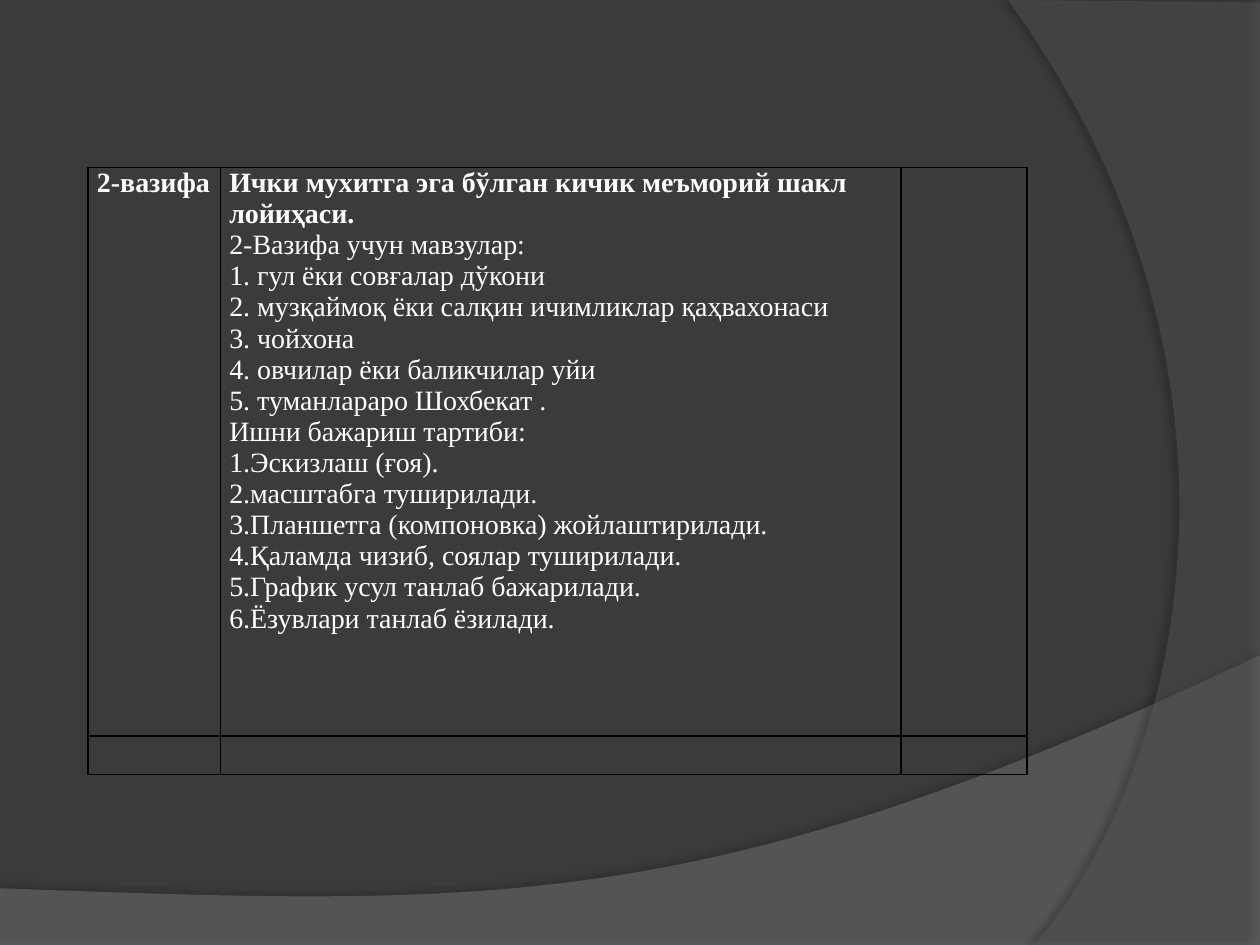
import pptx
import pptx.util
import pptx.dml.color
import pptx.oxml
from pptx.oxml.ns import qn, nsdecls
from pptx.util import Inches, Pt

HUES = {"back": "3B3B3B", "wave": "7F7F7F", "arc": "5E5E5E",
        "text": "FFFFFF", "line": "000000"}


def color(name):
    return pptx.dml.color.RGBColor.from_string(HUES[name])


def curve(a, b, c, d, steps=60):
    """Points along a cubic Bezier, after its start."""
    pts = []
    for i in range(1, steps + 1):
        t = i / steps
        u = 1 - t
        pts.append(tuple(u**3 * p + 3 * u * u * t * q + 3 * u * t * t * r + t**3 * s
                         for p, q, r, s in zip(a, b, c, d)))
    return pts


prs = pptx.Presentation()
prs.slide_width, prs.slide_height = Inches(10), Inches(7.5)
slide = prs.slides.add_slide(prs.slide_layouts[6])
slide.background.fill.solid()
slide.background.fill.fore_color.rgb = color("back")

# Translucent bands: hue, opacity, shadow opacity, distance, angle, outline
wave = [(0, 7.05), (0, 7.51), (10, 7.51), (10, 5.2)]
wave += curve((10, 5.2), (5.59, 7.29), (3.91, 7.19), (0, 7.05))
arc = [(10, 0.02), (10, 7.5), (8.21, 7.5)]
arc += curve((8.21, 7.5), (9.35, 6.19), (10.18, 3), (8, 0))
bands = [("wave", 45, 35, 3.5, 270, wave), ("arc", 40, 45, 4, 180, arc)]

for hue, alpha, dark, dist, angle, pts in bands:
    spots = [(Inches(x), Inches(y)) for x, y in pts]
    pen = slide.shapes.build_freeform(*spots[0])
    pen.add_line_segments(spots[1:], close=True)
    band = pen.convert_to_shape()
    band.fill.solid()
    band.fill.fore_color.rgb = color(hue)
    band.line.fill.background()
    band.shadow.inherit = False
    props = band.element.spPr
    tint = props.find(qn("a:solidFill"))[0]
    tint.append(pptx.oxml.parse_xml(f'<a:alpha {nsdecls("a")} val="{alpha * 1000}"/>'))
    props.find(qn("a:effectLst")).append(pptx.oxml.parse_xml(
        f'<a:outerShdw {nsdecls("a")} blurRad="{Pt(4)}" dist="{Pt(dist)}" '
        f'dir="{angle * 60000}" algn="ctr" rotWithShape="0">'
        f'<a:srgbClr val="{HUES["line"]}"><a:alpha val="{dark * 1000}"/></a:srgbClr>'
        '</a:outerShdw>'))

# Task table
task = ["2-вазифа"]
topics = [
    "Ички мухитга эга бўлган кичик меъморий шакл лойиҳаси.",
    "2-Вазифа учун мавзулар:",
    "1. гул ёки совғалар дўкони",
    "2. музқаймоқ ёки салқин ичимликлар қаҳвахонаси",
    "3. чойхона",
    "4. овчилар ёки баликчилар уйи",
    "5. туманлараро Шохбекат .",
    "Ишни бажариш тартиби:",
    "1.Эскизлаш (ғоя).",
    "2.масштабга туширилади.",
    "3.Планшетга (компоновка) жойлаштирилади.",
    "4.Қаламда чизиб, соялар туширилади.",
    "5.График усул танлаб бажарилади.",
    "6.Ёзувлари танлаб ёзилади.",
]
rows = [[task, topics, []], [[], [], []]]
wide, high = [1.05, 5.4, 1], [4.51, 0.3]

table = slide.shapes.add_table(2, 3, Inches(0.7), Inches(1.33),
                               Inches(sum(wide)), Inches(sum(high))).table
table.first_row = table.horz_banding = False
for col, width in zip(table.columns, wide):
    col.width = Inches(width)
for row, height, texts in zip(table.rows, high, rows):
    row.height = Inches(height)
    for cell, lines in zip(row.cells, texts):
        cell.margin_left = cell.margin_right = Inches(0.07)
        cell.margin_top = cell.margin_bottom = 0
        props = cell._tc.get_or_add_tcPr()
        for side in ("lnL", "lnR", "lnT", "lnB"):
            props.append(pptx.oxml.parse_xml(
                f'<a:{side} {nsdecls("a")} w="{Pt(1)}"><a:solidFill>'
                f'<a:srgbClr val="{HUES["line"]}"/></a:solidFill></a:{side}>'))
        cell.fill.background()
        cell.text_frame.text = "\n".join(lines)
        for i, para in enumerate(cell.text_frame.paragraphs):
            for run in para.runs:
                run.font.name = "Times New Roman"
                run.font.size = Pt(16)
                run.font.bold = i == 0
                run.font.color.rgb = color("text")

prs.save("out.pptx")
